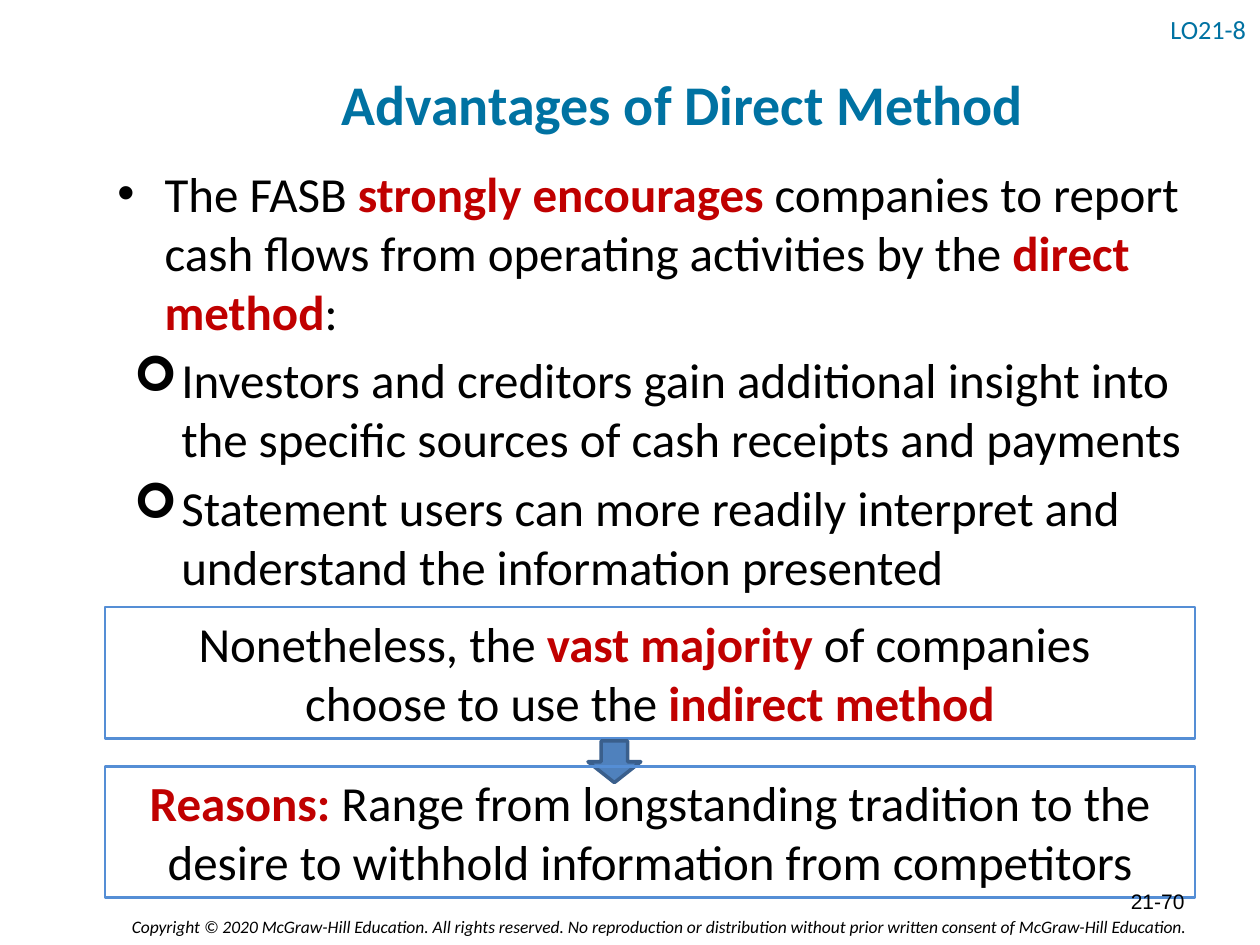
from typing import NamedTuple

from lxml import etree
from pptx import Presentation
from pptx.dml.color import RGBColor
from pptx.enum import shapes, text
from pptx.oxml.ns import qn
from pptx.util import Pt

BLACK = RGBColor(0x00, 0x00, 0x00)
RED = RGBColor(0xC0, 0x00, 0x00)
TEAL = RGBColor(0x00, 0x72, 0xA2)
EDGE = RGBColor(0x55, 0x8E, 0xD5)
BLUE = RGBColor(0x4F, 0x81, 0xBD)
NAVY = RGBColor(0x3A, 0x5F, 0x8C)

LEFT, MID, RIGHT = text.PP_ALIGN.LEFT, text.PP_ALIGN.CENTER, text.PP_ALIGN.RIGHT
TOP, CENTER = text.MSO_ANCHOR.TOP, text.MSO_ANCHOR.MIDDLE


class Area(NamedTuple):
    left: float
    top: float
    width: float
    height: float

    def pts(self) -> list:
        return [Pt(side) for side in self]


class Style(NamedTuple):
    size: float = 28
    color: RGBColor = BLACK
    face: str = "Calibri"
    bold: bool = False
    slant: bool = False
    align: text.PP_ALIGN = LEFT
    lead: float = 1.0


class Point(NamedTuple):
    mark: str
    face: str
    indent: float
    words: str


class Panel(NamedTuple):
    top: float
    lines: list


MAIN = Style()
BOXED = Style(align=MID)
HANG = 27
PANEL_LEFT, PANEL_WIDTH, PANEL_HEIGHT = 60, 622.8, 74.9

# Words between asterisks are stressed in bold red.
POINTS = [
    Point("•", "Arial", 27, "The FASB *strongly encourages *companies to report cash "
          "flows from operating activities by the *direct method*:"),
    Point("➢", "Wingdings", 36.5, "Investors and creditors gain additional insight "
          "into the specific sources of cash receipts and payments"),
    Point("➢", "Wingdings", 36.5, "Statement users can more readily interpret and "
          "understand the information presented"),
]
PANELS = [
    Panel(347, ["Nonetheless, the *vast majority *of companies ",
                "choose to use the *indirect method*"]),
    Panel(438, ["*Reasons: *Range from longstanding tradition to the desire to "
                "withhold information from competitors"]),
]


def write(para, words: str, style: Style) -> None:
    """Fill a paragraph, stressing the words between asterisks."""
    para.alignment, para.line_spacing = style.align, style.lead
    font = para.font
    font.name, font.size = style.face, Pt(style.size)
    font.bold, font.italic = style.bold, style.slant
    font.color.rgb = style.color
    for i, part in enumerate(words.split("*")):
        if part:
            run = para.add_run()
            run.text = part
            if i % 2:
                run.font.bold = True
                run.font.color.rgb = RED


def setup(frame, anchor) -> None:
    frame.word_wrap = True
    frame.auto_size = text.MSO_AUTO_SIZE.NONE
    frame.vertical_anchor = anchor


def label(slide, area: Area, words: str, style: Style, anchor=CENTER) -> None:
    frame = slide.shapes.add_textbox(*area.pts()).text_frame
    setup(frame, anchor)
    write(frame.paragraphs[0], words, style)


def lines(frame, count: int) -> list:
    """Give the frame this many paragraphs."""
    return [frame.paragraphs[0]] + [frame.add_paragraph() for _ in range(count - 1)]


def bullet(para, point: Point) -> None:
    props = para._p.get_or_add_pPr()
    props.set("marL", str(Pt(point.indent)))
    props.set("indent", str(Pt(-HANG)))
    etree.SubElement(props, qn("a:buFont")).set("typeface", point.face)
    etree.SubElement(props, qn("a:buChar")).set("char", point.mark)


def body(slide, area: Area) -> None:
    frame = slide.shapes.add_textbox(*area.pts()).text_frame
    setup(frame, TOP)
    for i, (para, point) in enumerate(zip(lines(frame, len(POINTS)), POINTS)):
        bullet(para, point)
        write(para, point.words, MAIN)
        if i:
            para.space_before = Pt(5.6)


def panel(slide, item: Panel) -> None:
    area = Area(PANEL_LEFT, item.top, PANEL_WIDTH, PANEL_HEIGHT)
    box = slide.shapes.add_shape(shapes.MSO_SHAPE.RECTANGLE, *area.pts())
    box.shadow.inherit = False
    box.fill.background()
    box.line.color.rgb, box.line.width = EDGE, Pt(1.5)
    setup(box.text_frame, TOP)
    for para, words in zip(lines(box.text_frame, len(item.lines)), item.lines):
        write(para, words, BOXED)


def arrow(slide, area: Area) -> None:
    shape = slide.shapes.add_shape(shapes.MSO_SHAPE.DOWN_ARROW, *area.pts())
    shape.shadow.inherit = False
    shape.fill.solid()
    shape.fill.fore_color.rgb = BLUE
    shape.line.color.rgb, shape.line.width = NAVY, Pt(2)


def title(slide, area: Area, words: str, style: Style) -> None:
    head = slide.shapes.title
    head.left, head.top, head.width, head.height = area.pts()
    setup(head.text_frame, CENTER)
    write(head.text_frame.paragraphs[0], words, style)


def main() -> None:
    deck = Presentation()
    deck.slide_width, deck.slide_height = Pt(720), Pt(540)
    slide = deck.slides.add_slide(deck.slide_layouts[5])

    label(slide, Area(32.4, 519.8, 654.5, 19.4),
          "Copyright © 2020 McGraw-Hill Education. All rights reserved. No reproduction "
          "or distribution without prior written consent of McGraw-Hill Education. ",
          Style(10, slant=True, align=RIGHT), TOP)
    label(slide, Area(661.7, 3.6, 58.3, 28.8), "LO21-8", Style(15, TEAL, lead=0.9))
    title(slide, Area(60, 0, 660, 113.8), "Advantages of Direct Method",
          Style(32, TEAL, bold=True, align=MID, lead=1.1))
    body(slide, Area(60, 90, 630.7, 421.9))
    first, last = PANELS
    panel(slide, first)
    arrow(slide, Area(336, 423.4, 30.2, 23.8))
    panel(slide, last)
    label(slide, Area(516.2, 500.4, 167.8, 28.8), "21-70",
          Style(12, face="Arial", align=RIGHT))
    deck.save("out.pptx")


if __name__ == "__main__":
    main()
